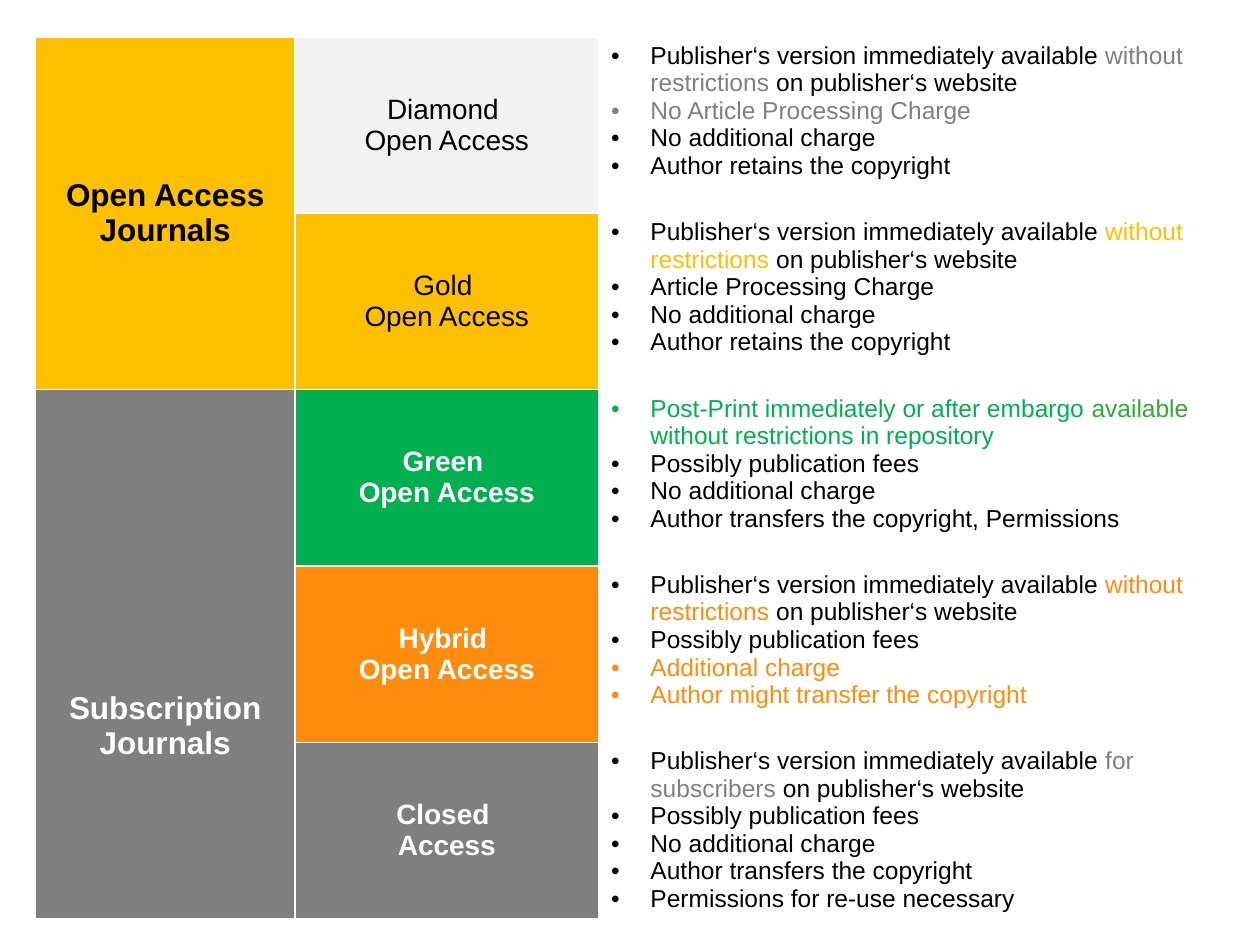
from lxml.etree import SubElement
from pptx import Presentation
from pptx.dml.color import RGBColor
from pptx.enum.text import MSO_ANCHOR as ANCHOR, PP_ALIGN as ALIGN
from pptx.oxml.ns import qn
from pptx.util import Pt

BLACK, WHITE, GRAY, GOLD = "000000", "FFFFFF", "7F7F7F", "FFC000"
SILVER, GREEN, LEAF, ORANGE = "808080", "00B050", "30A93B", "FF8C0C"
COLS = (148.4, 173.4, 352.8)
ROW_H = 100.8


def rgb(color):
    return RGBColor.from_string(color)


def plain(text):
    return [(text, BLACK)]


def publisher(access, color):
    return [("Publisher‘s version immediately available ", BLACK),
            (access, color), (" on publisher‘s website", BLACK)]


NO_CHARGE = plain("No additional charge")
FEES = plain("Possibly publication fees")
RETAINS = plain("Author retains the copyright")

JOURNALS = [
    (0, 2, "Open Access Journals", GOLD, BLACK, 0),
    (2, 3, "Subscription Journals", GRAY, WHITE, 82),
]
MODELS = [
    (["Diamond ", "Open Access"], "F2F2F2", BLACK, [
        publisher("without restrictions", SILVER),
        [("No Article Processing Charge", SILVER)], NO_CHARGE, RETAINS]),
    (["Gold ", "Open Access"], GOLD, BLACK, [
        publisher("without restrictions", GOLD),
        plain("Article Processing Charge"), NO_CHARGE, RETAINS]),
    (["Green ", "Open Access"], GREEN, WHITE, [
        [("Post-Print immediately or after embargo ", GREEN),
         ("available ", LEAF), ("without restrictions in repository", GREEN)],
        FEES, NO_CHARGE,
        plain("Author transfers the copyright, Permissions")]),
    (["Hybrid ", "Open Access"], ORANGE, WHITE, [
        publisher("without restrictions", ORANGE), FEES,
        [("Additional charge", ORANGE)],
        [("Author might transfer the copyright", ORANGE)]]),
    (["Closed ", "Access"], GRAY, WHITE, [
        publisher("for subscribers", SILVER), FEES, NO_CHARGE,
        plain("Author transfers the copyright"),
        plain("Permissions for re-use necessary")]),
]


def style_cell(cell, fill):
    tcPr = cell._tc.get_or_add_tcPr()
    for side in ("a:lnL", "a:lnR", "a:lnT", "a:lnB"):
        ln = SubElement(tcPr, qn(side), w=str(Pt(1)))
        SubElement(SubElement(ln, qn("a:solidFill")), qn("a:srgbClr"), val=WHITE)
    cell.fill.solid()
    cell.fill.fore_color.rgb = rgb(fill)
    cell.margin_top = cell.margin_bottom = Pt(3)


def add_bullet(p):
    pPr = p._p.get_or_add_pPr()
    pPr.set("marL", str(Pt(22.5)))
    pPr.set("indent", str(-Pt(22.5)))
    SubElement(pPr, qn("a:buFont"), typeface="Arial")
    SubElement(pPr, qn("a:buChar"), char="•")


def write(cell, paragraphs, size, bold=False, bullets=False):
    tf = cell.text_frame
    for i, runs in enumerate(paragraphs):
        p = tf.add_paragraph() if i else tf.paragraphs[0]
        if bullets:
            add_bullet(p)
        else:
            p.alignment = ALIGN.CENTER
        for text, color in runs:
            r = p.add_run()
            r.text = text
            r.font.name = "Arial"
            r.font.size = Pt(size)
            r.font.bold = bold
            r.font.color.rgb = rgb(color)
    cell.vertical_anchor = ANCHOR.TOP if bullets else ANCHOR.MIDDLE


def add_access_table(s, left, top):
    table = s.shapes.add_table(len(MODELS), len(COLS), Pt(left), Pt(top),
                               Pt(sum(COLS)), Pt(ROW_H * len(MODELS))).table
    table.first_row = table.horz_banding = False
    for col, width in zip(table.columns, COLS):
        col.width = Pt(width)
    for row in table.rows:
        row.height = Pt(ROW_H)

    for start, span, title, fill, color, drop in JOURNALS:
        for i in range(start, start + span):
            style_cell(table.cell(i, 0), fill)
        cell = table.cell(start, 0)
        cell.merge(table.cell(start + span - 1, 0))
        cell.margin_top = Pt(3 + drop)
        write(cell, [[(title, color)]], 18, bold=True)

    for i, (lines, fill, color, points) in enumerate(MODELS):
        model, detail = table.cell(i, 1), table.cell(i, 2)
        style_cell(model, fill)
        write(model, [[(line, color)] for line in lines], 16, bold=color == WHITE)
        style_cell(detail, WHITE)
        write(detail, points, 14, bullets=True)


def main():
    prs = Presentation()
    prs.slide_width, prs.slide_height = Pt(720), Pt(540)
    s = prs.slides.add_slide(prs.slide_layouts[6])
    add_access_table(s, 20.2, 21)
    prs.save("out.pptx")


if __name__ == "__main__":
    main()
